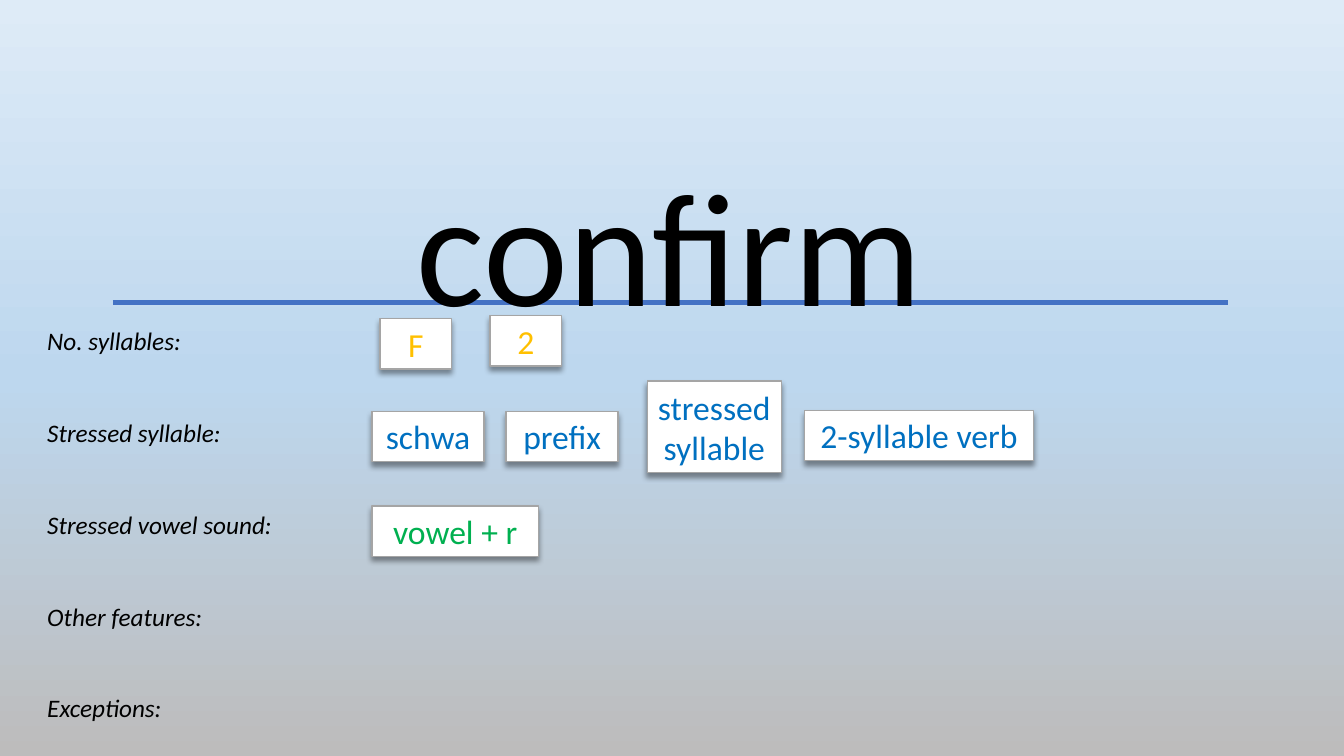
"""Build a word-analysis slide for the spelling of "confirm"."""
from copy import deepcopy

from lxml import etree
from pptx import Presentation
from pptx.dml.color import RGBColor
from pptx.enum.shapes import MSO_CONNECTOR, MSO_SHAPE
from pptx.enum.text import MSO_AUTO_SIZE, PP_ALIGN
from pptx.oxml.ns import qn
from pptx.util import Inches, Pt

STRAIGHT = MSO_CONNECTOR.STRAIGHT
RECTANGLE = MSO_SHAPE.RECTANGLE
GROW = MSO_AUTO_SIZE.SHAPE_TO_FIT_TEXT
LEFT, CENTER = PP_ALIGN.LEFT, PP_ALIGN.CENTER

BLACK = RGBColor(0x00, 0x00, 0x00)
WHITE = RGBColor(0xFF, 0xFF, 0xFF)
GRAY = RGBColor(0xA5, 0xA5, 0xA5)
RULE_BLUE = RGBColor(0x44, 0x72, 0xC4)
GOLD = RGBColor(0xFF, 0xC0, 0x00)
BLUE = RGBColor(0x00, 0x70, 0xC0)
GREEN = RGBColor(0x00, 0xB0, 0x50)
SKY = [
    (0, RGBColor(0xDE, 0xEB, 0xF7)),
    (0.5, RGBColor(0xBD, 0xD7, 0xEE)),
    (1, RGBColor(0xBD, 0xBC, 0xBC)),
]

FONT = "Calibri"
WORD = "confirm"
QUESTIONS = [
    "No. syllables:",
    "Stressed syllable:",
    "Stressed vowel sound:",
    "Other features:",
    "Exceptions:",
]
ANSWERS = [
    ("F", GOLD, 3.77, 3.16, 0.71),
    ("2", GOLD, 4.86, 3.13, 0.71),
    ("schwa", BLUE, 3.69, 4.08, 1.11),
    ("prefix", BLUE, 5.02, 4.08, 1.11),
    ("stressed\nsyllable", BLUE, 6.42, 3.78, 1.33),
    ("2-syllable verb", BLUE, 7.98, 4.07, 2.27),
    ("vowel + r", GREEN, 3.69, 5.02, 1.65),
]
CARD_HEIGHT, EXTRA_LINE = 0.5, 0.41
QUESTION_GAP = Pt(44)


def paint_background(slide):
    fill = slide.background.fill
    fill.gradient()
    fill.gradient_angle = 270
    stops = next(slide.element.iter(qn("a:gsLst")))
    stops.append(deepcopy(stops[-1]))
    for stop, (position, color) in zip(fill.gradient_stops, SKY):
        stop.position = position
        stop.color.rgb = color


def write(shape, text, size, color, align=CENTER, italic=False, gap=0):
    frame = shape.text_frame
    frame.word_wrap = True
    frame.auto_size = GROW
    frame.text = text
    for paragraph in frame.paragraphs:
        paragraph.alignment = align
        paragraph.space_after = gap
        font = paragraph.font
        font.name, font.size, font.italic = FONT, Pt(size), italic
        font.color.rgb = color


def cast_shadow(shape):
    shape.shadow.inherit = False
    effects = shape.element.spPr.find(qn("a:effectLst"))
    shadow = etree.SubElement(
        effects, qn("a:outerShdw"), blurRad=str(Pt(4)), dist=str(Pt(3)),
        dir="5400000", algn="t", rotWithShape="0")
    tint = etree.SubElement(shadow, qn("a:srgbClr"), val=str(BLACK))
    etree.SubElement(tint, qn("a:alpha"), val="40000")


def add_answer(slide, text, color, left, top, width):
    height = CARD_HEIGHT + EXTRA_LINE * text.count("\n")
    card = slide.shapes.add_shape(
        RECTANGLE, Inches(left), Inches(top), Inches(width), Inches(height))
    card.fill.solid()
    card.fill.fore_color.rgb = WHITE
    card.line.color.rgb = GRAY
    card.line.width = Pt(1)
    cast_shadow(card)
    write(card, text, 24, color)


def main():
    prs = Presentation()
    prs.slide_width, prs.slide_height = Inches(13.33), Inches(7.5)
    slide = prs.slides.add_slide(prs.slide_layouts[6])
    paint_background(slide)

    rule = slide.shapes.add_connector(
        STRAIGHT, Inches(1.12), Inches(3), Inches(12.18), Inches(3))
    rule.line.color.rgb = RULE_BLUE
    rule.line.width = Pt(3)
    etree.SubElement(rule.element.spPr, qn("a:effectLst"))

    word = slide.shapes.add_textbox(
        Inches(1.72), Inches(1.39), Inches(9.84), Inches(2.04))
    write(word, WORD, 115, BLACK)

    for answer in ANSWERS:
        add_answer(slide, *answer)

    questions = slide.shapes.add_textbox(
        Inches(0.37), Inches(3.18), Inches(2.45), Inches(4.04))
    write(questions, "\n".join(QUESTIONS), 18, BLACK, LEFT, True, QUESTION_GAP)

    prs.save("out.pptx")


if __name__ == "__main__":
    main()
